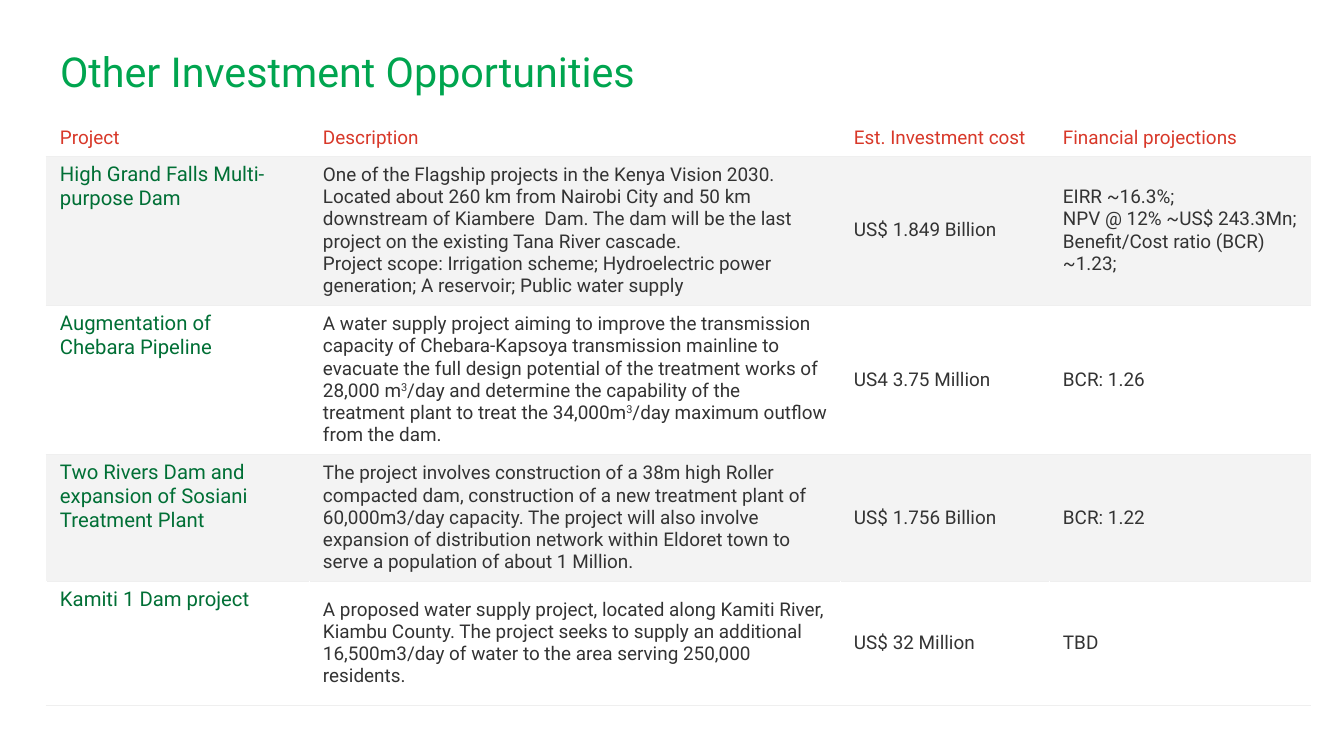
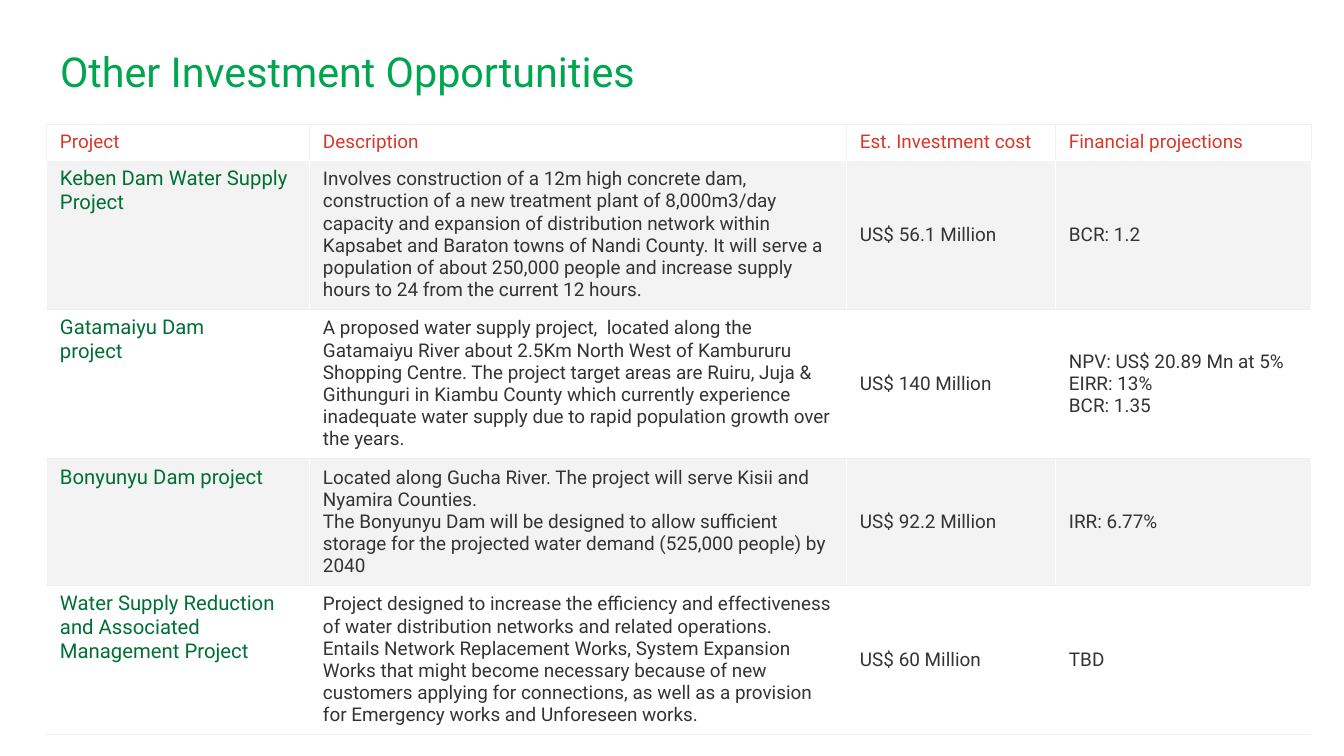
from lxml import etree
from pptx import Presentation
from pptx import util as u
from pptx.dml.color import RGBColor
from pptx.enum import text
from pptx.oxml import ns

EMU_PER_PX = 914400 / 50.4
FONT = "Roboto"
WHITE = RGBColor(0xFF, 0xFF, 0xFF)
BAND_GREY = RGBColor(0xF3, 0xF3, 0xF3)
RULE_GREY = RGBColor(0xEF, 0xEF, 0xEF)
TITLE_GREEN = RGBColor(0x00, 0xA5, 0x4F)
PROJECT_GREEN = RGBColor(0x00, 0x6F, 0x35)
HEADER_RED = RGBColor(0xD8, 0x38, 0x29)
BODY_GREY = RGBColor(0x33, 0x33, 0x33)

TITLE = "Other Investment Opportunities"
HEADERS = ("Project", "Description", "Est. Investment cost", "Financial projections")
BORDER_SIDES = ("lnL", "lnR", "lnT", "lnB")
BORDER_COLORS = {"W": WHITE, "G": RULE_GREY}

DAM_PROJECTS = [
    HEADERS,
    (
        "High Grand Falls Multi-purpose Dam",
        "One of the Flagship projects in the Kenya Vision 2030. Located about 260 km from "
        "Nairobi City and 50 km downstream of Kiambere  Dam. The dam will be the last project "
        "on the existing Tana River cascade.\n"
        "Project scope: Irrigation scheme; Hydroelectric power generation; A reservoir; "
        "Public water supply",
        "US$ 1.849 Billion",
        "EIRR ~16.3%;\nNPV @ 12% ~US$ 243.3Mn; Benefit/Cost ratio (BCR) ~1.23;",
    ),
    (
        "Augmentation of\vChebara Pipeline",
        "A water supply project aiming to improve the transmission capacity of Chebara-Kapsoya "
        "transmission mainline to evacuate the full design potential of the treatment works of "
        "28,000 m^3^/day and determine the capability of the treatment plant to treat the "
        "34,000m^3^/day maximum outflow from the dam.",
        "US4 3.75 Million",
        "BCR: 1.26",
    ),
    (
        "Two Rivers Dam and expansion of Sosiani Treatment Plant",
        "The project involves construction of a 38m high Roller compacted dam, construction of "
        "a new treatment plant of 60,000m3/day capacity. The project will also involve expansion "
        "of distribution network within Eldoret town to serve a population of about 1 Million.",
        "US$ 1.756 Billion",
        "BCR: 1.22",
    ),
    (
        "Kamiti 1 Dam project",
        "A proposed water supply project, located along Kamiti River, Kiambu County. The project "
        "seeks to supply an additional 16,500m3/day of water to the area serving 250,000 residents.",
        "US$ 32 Million",
        "TBD",
    ),
]

SUPPLY_PROJECTS = [
    HEADERS,
    (
        "Keben Dam Water Supply Project",
        "Involves construction of a 12m high concrete dam, construction of a new treatment plant "
        "of 8,000m3/day capacity and expansion of distribution network within Kapsabet and Baraton "
        "towns of Nandi County. It will serve a population of about 250,000 people and increase "
        "supply hours to 24 from the current 12 hours.",
        "US$ 56.1 Million",
        "BCR: 1.2",
    ),
    (
        "Gatamaiyu Dam\nproject",
        "A proposed water supply project,  located along the Gatamaiyu River about 2.5Km North "
        "West of Kambururu Shopping Centre. The project target areas are Ruiru, Juja & Githunguri "
        "in Kiambu County which currently experience inadequate water supply due to rapid "
        "population growth over the years.",
        "US$ 140 Million",
        "NPV: US$ 20.89 Mn at 5%\nEIRR: 13%\nBCR: 1.35",
    ),
    (
        "Bonyunyu Dam project",
        "Located along Gucha River. The project will serve Kisii and Nyamira Counties.\n"
        "The Bonyunyu Dam will be designed to allow sufficient storage for the projected water "
        "demand (525,000 people) by 2040",
        "US$ 92.2 Million",
        "IRR: 6.77%",
    ),
    (
        "Water Supply Reduction and Associated Management Project",
        "Project designed to increase the efficiency and effectiveness of water distribution "
        "networks and related operations. Entails Network Replacement Works, System Expansion "
        "Works that might become necessary because of new customers applying for connections, "
        "as well as a provision for Emergency works and Unforeseen works.",
        "US$ 60 Million",
        "TBD",
    ),
]


def px(length):
    return u.Emu(round(length * EMU_PER_PX))


def format_run(run, size, color):
    run.font.name = FONT
    run.font.size = u.Pt(size)
    run.font.color.rgb = color


def write_paragraph(paragraph, line, size, color):
    if "^" in line:
        for index, part in enumerate(line.split("^")):
            run = paragraph.add_run()
            run.text = part
            if index % 2:
                run.font._element.set("baseline", "30000")
    else:
        paragraph.text = line
    for run in paragraph.runs:
        format_run(run, size, color)


def set_borders(cell, border_codes):
    properties = cell._tc.get_or_add_tcPr()
    for side, code in zip(BORDER_SIDES, border_codes):
        line = etree.SubElement(properties, ns.qn(f"a:{side}"), w=str(u.Pt(0.75)))
        if code in BORDER_COLORS:
            fill = etree.SubElement(line, ns.qn("a:solidFill"))
            etree.SubElement(fill, ns.qn("a:srgbClr"), val=str(BORDER_COLORS[code]))
        else:
            etree.SubElement(line, ns.qn("a:noFill"))


def cell_style(row, column):
    if row == 0:
        return 27, HEADER_RED, text.MSO_ANCHOR.TOP
    if column == 0:
        return 29, PROJECT_GREEN, text.MSO_ANCHOR.TOP
    return 27, BODY_GREY, text.MSO_ANCHOR.MIDDLE


def write_cell(cell, content, row, column, border_codes):
    size, color, anchor = cell_style(row, column)
    cell.margin_left, cell.margin_right = px(14), px(13)
    cell.margin_top = cell.margin_bottom = u.Inches(0.13)
    cell.vertical_anchor = anchor
    set_borders(cell, border_codes)
    cell.fill.solid()
    cell.fill.fore_color.rgb = BAND_GREY if row % 2 else WHITE
    frame = cell.text_frame
    for index, line in enumerate(content.split("\n")):
        paragraph = frame.add_paragraph() if index else frame.paragraphs[0]
        write_paragraph(paragraph, line, size, color)


def add_title(slide):
    frame = slide.shapes.add_textbox(px(46), px(32), px(1252), px(84)).text_frame
    frame.word_wrap = True
    frame.margin_left = frame.margin_right = px(14)
    frame.margin_top = frame.margin_bottom = px(14)
    write_paragraph(frame.paragraphs[0], TITLE, 59, TITLE_GREEN)


def add_project_table(slide, projects, top, widths, heights, borders):
    shape = slide.shapes.add_table(
        len(projects), len(widths), px(46), px(top), px(sum(widths)), px(sum(heights))
    )
    table = shape.table
    table.first_row = table.horz_banding = False
    for column, width in zip(table.columns, widths):
        column.width = px(width)
    for row, (project, height) in enumerate(zip(projects, heights)):
        table.rows[row].height = px(height)
        for column, content in enumerate(project):
            write_cell(table.cell(row, column), content, row, column, borders[row])


def add_project_slide(presentation, **table_options):
    slide = presentation.slides.add_slide(presentation.slide_layouts[6])
    slide.background.fill.solid()
    slide.background.fill.fore_color.rgb = WHITE
    add_title(slide)
    add_project_table(slide, **table_options)


def main():
    presentation = Presentation()
    presentation.slide_width, presentation.slide_height = px(1344), px(756)
    add_project_slide(
        presentation,
        projects=DAM_PROJECTS,
        top=120,
        widths=(263, 531, 209, 262),
        heights=(35, 147, 146, 125, 124),
        borders=("---G", "--GG", "--GG", "--GG", "WWGG"),
    )
    add_project_slide(
        presentation,
        projects=SUPPLY_PROJECTS,
        top=124,
        widths=(263, 537, 209, 256),
        heights=(36, 146, 147, 124, 147),
        borders=("GGGW", "WWWG", "WWGG", "WWGG", "--GG"),
    )
    presentation.save("out.pptx")


if __name__ == "__main__":
    main()
